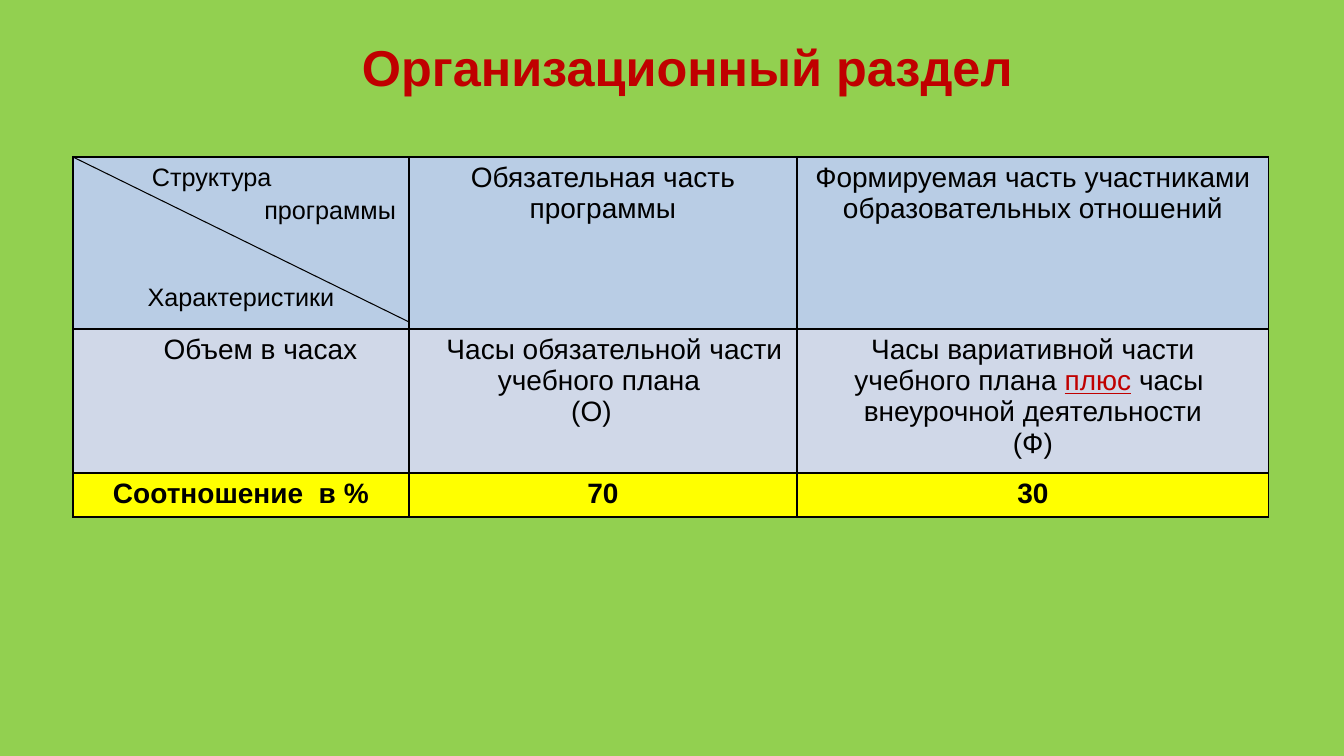
"""Builds the slide on the organisational section of the programme."""
from lxml import etree
from pptx import Presentation
from pptx.dml.color import RGBColor
from pptx.enum.shapes import MSO_CONNECTOR
from pptx.enum.text import MSO_ANCHOR, MSO_AUTO_SIZE, PP_ALIGN
from pptx.oxml import parse_xml
from pptx.oxml.ns import nsdecls, qn
from pptx.util import Pt

LEFT, MID, RIGHT = PP_ALIGN.LEFT, PP_ALIGN.CENTER, PP_ALIGN.RIGHT
TOP, NO_FIT = MSO_ANCHOR.TOP, MSO_AUTO_SIZE.NONE
LINE = MSO_CONNECTOR.STRAIGHT
BLACK = RGBColor(0, 0, 0)
RED = RGBColor(0xC0, 0, 0)
GREEN = RGBColor(0x92, 0xD0, 0x50)
BLUE = RGBColor(0xB9, 0xCD, 0xE5)
PALE = RGBColor(0xD0, 0xD8, 0xE8)
GOLD = RGBColor(0xFF, 0xFF, 0)
FONT = "Arial"
SCALE = 914400 / 100.8

TITLE = "Организационный раздел"
MARK = "плюс"
HEAD = [
    [("Структура", {"size": 18, "align": LEFT, "marL": 66}),
     ("программы", {"size": 18, "align": RIGHT, "gap": 3}),
     ("Характеристики", {"size": 18, "gap": 42})],
    [("Обязательная часть программы", {})],
    [("Формируемая часть участниками образовательных отношений", {})],
]
HOURS = [
    [("Объем в часах", {"marL": 39})],
    [("Часы обязательной части учебного плана ", {"indent": 23}),
     ("(О)", {"marR": 23})],
    [("Часы вариативной части учебного плана плюс часы ", {}),
     ("внеурочной деятельности", {}),
     ("(Ф)", {})],
]
SHARE = [
    [("Соотношение  в %", {})],
    [("70", {})],
    [("30", {})],
]
ROWS = [(HEAD, 172, BLUE, False), (HOURS, 144, PALE, False), (SHARE, 44, GOLD, True)]
COLS = [336, 388, 472]
GRID_X, GRID_Y = 73, 157
SLASH = (GRID_X, GRID_Y, GRID_X + COLS[0], GRID_Y + 165)


def px(num):
    """Turns px into EMU."""
    return round(num * SCALE)


def style(run, size, color, bold):
    """Sets the font of a run."""
    font = run.font
    font.name, font.size, font.bold = FONT, Pt(size), bold
    font.color.rgb = color


def write(para, text, look, bold):
    """Fills one paragraph of a cell."""
    start, mark, end = text.partition(MARK)
    para.text = start
    for part in filter(None, (mark, end)):
        para.add_run().text = part
    para.alignment = look.get("align", MID)
    para.space_before = Pt(look.get("gap", 0))
    props = para._p.get_or_add_pPr()
    for key in ("marL", "marR", "indent"):
        props.set(key, str(px(look.get(key, 0))))
    for run in para.runs:
        hit = run.text == MARK
        style(run, look.get("size", 20), RED if hit else BLACK, bold)
        run.font.underline = hit


def edge(cell):
    """Draws the four borders of a cell."""
    props = cell._tc.get_or_add_tcPr()
    for spot, side in enumerate(("lnL", "lnR", "lnT", "lnB")):
        props.insert(spot, parse_xml(
            f'<a:{side} {nsdecls("a")} w="{Pt(1)}"><a:solidFill>'
            f'<a:srgbClr val="{BLACK}"/></a:solidFill></a:{side}>'))


def fill_cell(cell, paras, color, bold):
    """Fills one cell with colour, text and borders."""
    cell.fill.solid()
    cell.fill.fore_color.rgb = color
    cell.margin_left = cell.margin_right = px(13)
    cell.margin_top = cell.margin_bottom = px(5)
    cell.vertical_anchor = TOP
    frame = cell.text_frame
    for num, (text, look) in enumerate(paras):
        para = frame.add_paragraph() if num else frame.paragraphs[0]
        write(para, text, look, bold)
    edge(cell)


def add_title(slide):
    """Places the title."""
    title = slide.shapes.title
    title.left, title.top, title.width, title.height = map(px, (95, 31, 1185, 119))
    frame = title.text_frame
    frame.text = TITLE
    frame.word_wrap, frame.auto_size = True, NO_FIT
    frame.vertical_anchor = TOP
    para = frame.paragraphs[0]
    para.alignment = MID
    style(para.runs[0], 36, RED, True)


def add_grid(slide):
    """Places the table."""
    high = sum(row[1] for row in ROWS)
    spot = map(px, (GRID_X, GRID_Y, sum(COLS), high))
    grid = slide.shapes.add_table(len(ROWS), len(COLS), *spot).table
    grid.first_row = grid.horz_banding = False
    for col, wide in zip(grid.columns, COLS):
        col.width = px(wide)
    for num, (cells, tall, color, bold) in enumerate(ROWS):
        grid.rows[num].height = px(tall)
        for col, paras in enumerate(cells):
            fill_cell(grid.cell(num, col), paras, color, bold)
    grid.cell(0, 0).margin_top = px(7)


def add_slash(slide):
    """Draws the diagonal of the corner cell."""
    slash = slide.shapes.add_connector(LINE, *map(px, SLASH))
    slash.line.color.rgb = BLACK
    slash.line.width = Pt(0.75)
    etree.SubElement(slash._element.spPr, qn("a:effectLst"))


def main():
    """Builds and saves the deck."""
    deck = Presentation()
    deck.slide_width, deck.slide_height = px(1344), px(756)
    slide = deck.slides.add_slide(deck.slide_layouts[5])
    back = slide.background.fill
    back.solid()
    back.fore_color.rgb = GREEN
    add_title(slide)
    add_grid(slide)
    add_slash(slide)
    deck.save("out.pptx")


if __name__ == "__main__":
    main()
